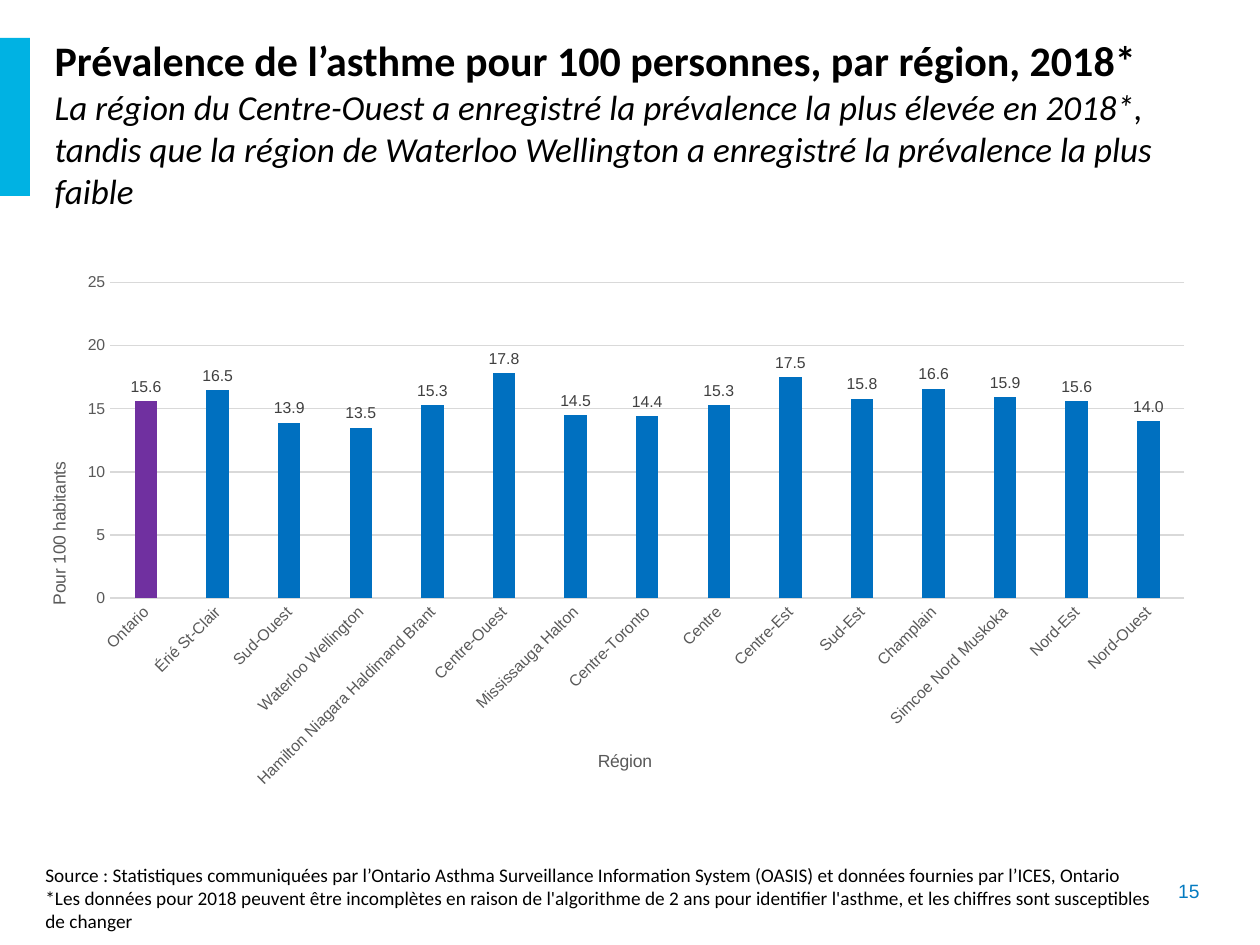
from lxml import etree
from pptx import Presentation
from pptx import util as u
from pptx.chart.data import CategoryChartData
from pptx.dml.color import RGBColor
from pptx.enum import chart as charts, shapes, text
from pptx.oxml import parse_xml
from pptx.oxml.ns import nsdecls, qn

SCALE = u.Inches(1) // 126
COLOURS = {
    "black": "000000", "accent": "00B2E3", "number": "047BC1",
    "bar": "0070C0", "province": "7030A0", "axis": "595959",
    "label": "404040", "grid": "D9D9D9",
}
PREVALENCE = {
    "Ontario": 15.6, "Érié St-Clair": 16.5, "Sud-Ouest": 13.9,
    "Waterloo Wellington": 13.5, "Hamilton Niagara Haldimand Brant": 15.3,
    "Centre-Ouest": 17.8, "Mississauga Halton": 14.5, "Centre-Toronto": 14.4,
    "Centre": 15.3, "Centre-Est": 17.5, "Sud-Est": 15.8, "Champlain": 16.6,
    "Simcoe Nord Muskoka": 15.9, "Nord-Est": 15.6, "Nord-Ouest": 14.0,
}
HEADING = "Prévalence de l’asthme pour 100 personnes, par région, 2018*"
SUBHEADING = ("La région du Centre-Ouest a enregistré la prévalence la plus élevée en 2018*, "
              "tandis que la région de Waterloo Wellington a enregistré la prévalence la plus faible")
SOURCES = [
    "Source : Statistiques communiquées par l’Ontario Asthma Surveillance Information System "
    "(OASIS) et données fournies par l’ICES, Ontario",
    "*Les données pour 2018 peuvent être incomplètes en raison de l'algorithme de 2 ans pour "
    "identifier l'asthme, et les chiffres sont susceptibles de changer",
]


def px(*lengths):
    return [u.Emu(length * SCALE) for length in lengths]


def colour(name):
    return RGBColor.from_string(COLOURS[name])


def format_font(font, size, name, fill, bold=False, italic=False):
    font.size, font.name = u.Pt(size), name
    font.bold, font.italic = bold, italic
    font.color.rgb = colour(fill)


def add_text(para, words, size=11, name="Calibri", fill="black",
             bold=False, italic=False, align=text.PP_ALIGN.LEFT):
    para.alignment = align
    span = para.add_run()
    span.text = words
    format_font(span.font, size, name, fill, bold, italic)


def add_box(page, bounds):
    box = page.shapes.add_textbox(*px(*bounds))
    box.text_frame.word_wrap = True
    return box.text_frame


def add_accent(page, bounds):
    bar = page.shapes.add_shape(shapes.MSO_SHAPE.RECTANGLE, *px(*bounds))
    bar.shadow.inherit = False
    bar.fill.solid()
    bar.fill.fore_color.rgb = colour("accent")
    bar.line.fill.background()


def fill_title(page, bounds):
    title = page.shapes.title
    title.left, title.top, title.width, title.height = px(*bounds)
    frame = title.text_frame
    frame.auto_size = text.MSO_AUTO_SIZE.NONE
    frame.vertical_anchor = text.MSO_ANCHOR.MIDDLE
    para = frame.paragraphs[0]
    add_text(para, HEADING, size=24, bold=True)
    para.add_line_break()
    add_text(para, SUBHEADING, size=20, italic=True)


def place(element, target=None, **position):
    old = element.find(qn("c:layout"))
    if old is not None:
        element.remove(old)
    layout = parse_xml(f"<c:layout {nsdecls('c')}/>")
    manual = etree.SubElement(layout, qn("c:manualLayout"))
    if target:
        etree.SubElement(manual, qn("c:layoutTarget")).set("val", target)
    for key in ("x", "y"):
        etree.SubElement(manual, qn(f"c:{key}Mode")).set("val", "edge")
    for key, value in position.items():
        etree.SubElement(manual, qn(f"c:{key}")).set("val", str(value))
    if target:
        element.insert(0, layout)
    else:
        element.find(qn("c:tx")).addnext(layout)


def style_line(line, fill):
    line.color.rgb = colour(fill)
    line.width = u.Pt(0.75)


def format_axis(axis, words, x, y):
    axis.major_tick_mark = axis.minor_tick_mark = charts.XL_TICK_MARK.NONE
    format_font(axis.tick_labels.font, 9, "Arial", "axis")
    title = axis.axis_title
    add_text(title.text_frame.paragraphs[0], words, size=10, name="Arial",
             fill="axis", align=text.PP_ALIGN.CENTER)
    place(title._element, x=x, y=y)


def add_prevalence_chart(page, bounds):
    data = CategoryChartData(number_format="#,##0.0")
    data.categories = list(PREVALENCE)
    data.add_series("Prévalence", list(PREVALENCE.values()))
    chart = page.shapes.add_chart(
        charts.XL_CHART_TYPE.COLUMN_CLUSTERED, *px(*bounds), data).chart
    chart.has_legend = chart.has_title = False
    format_font(chart.font, 10, "Arial", "black")

    regions, rates = chart.category_axis, chart.value_axis
    format_axis(regions, "Région", 0.48, 0.84)
    format_axis(rates, "Pour 100 habitants", 0.01, 0.34)
    style_line(regions.format.line, "grid")
    regions._element.find(qn("c:txPr")).find(qn("a:bodyPr")).set("rot", "-2700000")
    rates.minimum_scale, rates.maximum_scale, rates.major_unit = 0, 25, 5
    rates.tick_labels.number_format = "0"
    rates.tick_labels.number_format_is_linked = False
    rates.format.line.fill.background()
    style_line(rates.major_gridlines.format.line, "grid")

    plot = chart.plots[0]
    plot.vary_by_categories = False
    plot.gap_width, plot.overlap = 219, -27
    series = plot.series[0]
    for part, fill in ((series, "bar"), (series.points[0], "province")):
        part.format.fill.solid()
        part.format.fill.fore_color.rgb = colour(fill)
    labels = series.data_labels
    labels.show_value = True
    labels.number_format = "#,##0.0"
    labels.number_format_is_linked = False
    labels.position = charts.XL_LABEL_POSITION.OUTSIDE_END
    format_font(labels.font, 9, "Arial", "label")
    area = chart._chartSpace.chart.plotArea
    place(area, target="inner", x=0.066, y=0.034, w=0.918, h=0.548)


def main():
    deck = Presentation()
    deck.slide_width, deck.slide_height = px(1260, 945)
    page = deck.slides.add_slide(deck.slide_layouts[5])
    add_accent(page, (0, 38, 30, 158))
    fill_title(page, (42, 29, 1190, 188))
    add_prevalence_chart(page, (33, 263, 1170, 576))
    notes = add_box(page, (33, 857, 1143, 130))
    for index, words in enumerate(SOURCES):
        add_text(notes.add_paragraph() if index else notes.paragraphs[0], words)
    number = add_box(page, (1065, 873, 147, 37))
    add_text(number.paragraphs[0], "15", name="Arial", fill="number",
             align=text.PP_ALIGN.RIGHT)
    deck.save("out.pptx")


if __name__ == "__main__":
    main()
